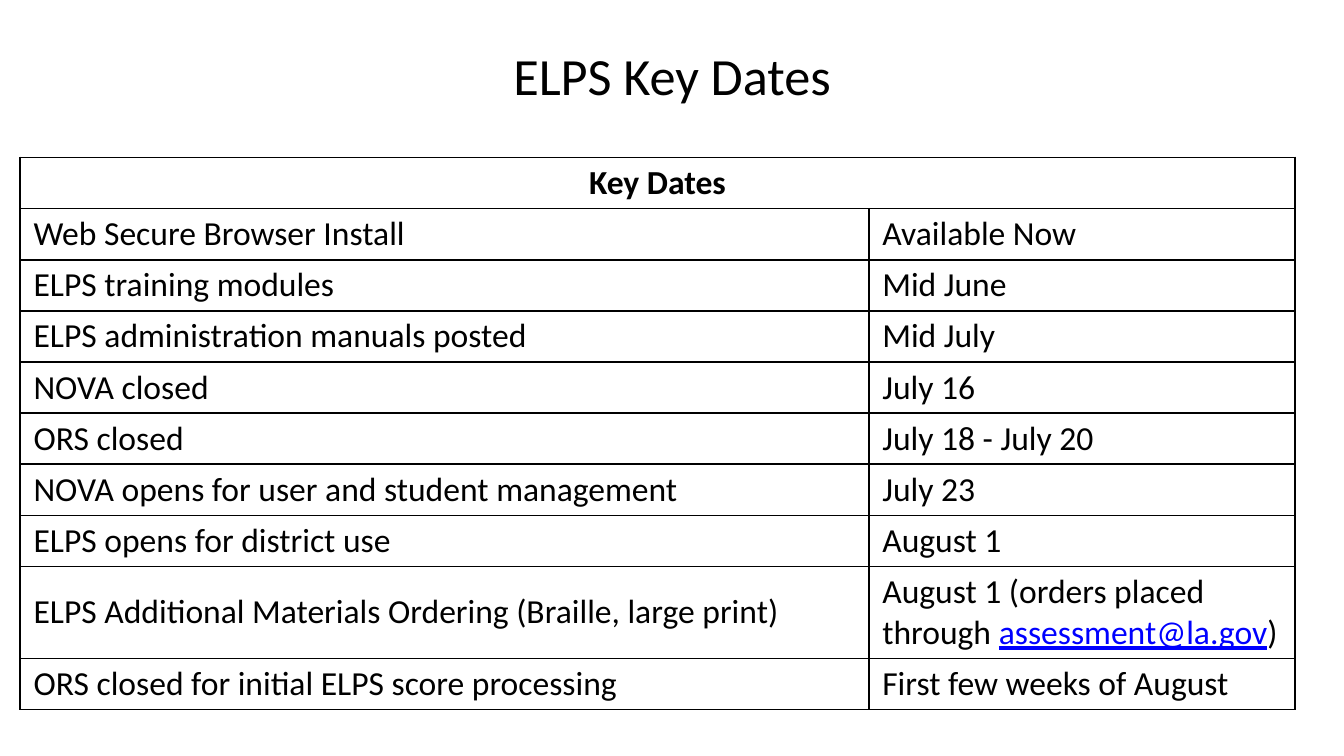
from dataclasses import dataclass

from lxml import etree
from pptx import Presentation
from pptx.dml.color import RGBColor
from pptx.enum import text
from pptx.oxml import ns
from pptx.util import Pt


@dataclass(frozen=True)
class Theme:
    font: str = "Calibri"
    ink: str = "000000"
    paper: str = "FFFFFF"
    link: str = "0000FF"
    title_size: int = 28
    body_size: int = 18
    border: float = 1


THEME = Theme()
EMAIL = "assessment@la.gov"
HEADING = "Key Dates"
KEY_DATES = [
    ("Web Secure Browser Install", "Available Now"),
    ("ELPS training modules", "Mid June"),
    ("ELPS administration manuals posted", "Mid July"),
    ("NOVA closed", "July 16"),
    ("ORS closed", "July 18 - July 20"),
    ("NOVA opens for user and student management", "July 23"),
    ("ELPS opens for district use", "August 1"),
    ("ELPS Additional Materials Ordering (Braille, large print)",
     f"August 1 (orders placed through {EMAIL})"),
    ("ORS closed for initial ELPS score processing", "First few weeks of August"),
]


def add_run(p, content, size, color=THEME.ink, **extra):
    r = p.add_run()
    r.text = content
    for name, value in dict(name=THEME.font, size=Pt(size), **extra).items():
        setattr(r.font, name, value)
    r.font.color.rgb = RGBColor.from_string(color)


def add_body(p, content, bold=False):
    before, email, after = content.partition(EMAIL)
    add_run(p, before, THEME.body_size, bold=bold)
    if email:
        add_run(p, email, THEME.body_size, THEME.link, underline=True)
        add_run(p, after, THEME.body_size)


def set_borders(cell):
    props = cell._tc.get_or_add_tcPr()
    for i, side in enumerate(("lnL", "lnR", "lnT", "lnB")):
        line = etree.Element(ns.qn(f"a:{side}"), w=str(Pt(THEME.border)))
        fill = etree.SubElement(line, ns.qn("a:solidFill"))
        etree.SubElement(fill, ns.qn("a:srgbClr"), val=THEME.ink)
        props.insert(i, line)


def format_cell(cell):
    margins = dict(margin_left=7.2, margin_right=7.2, margin_top=2.7, margin_bottom=2.7)
    for name, value in margins.items():
        setattr(cell, name, Pt(value))
    cell.vertical_anchor = text.MSO_ANCHOR.MIDDLE
    cell.fill.solid()
    cell.fill.fore_color.rgb = RGBColor.from_string(THEME.paper)
    set_borders(cell)


def place_title(s, content, left, top, width, height):
    sp = s.shapes.title
    for name, value in dict(left=left, top=top, width=width, height=height).items():
        setattr(sp, name, Pt(value))
    tf = sp.text_frame
    for side in ("left", "right", "top", "bottom"):
        setattr(tf, f"margin_{side}", Pt(7.2))
    tf.word_wrap = True
    tf.vertical_anchor = text.MSO_ANCHOR.MIDDLE
    p = tf.paragraphs[0]
    p.alignment = text.PP_ALIGN.CENTER
    add_run(p, content, THEME.title_size)


def place_dates(s, left, top, widths, row_height):
    count = len(KEY_DATES) + 1
    frame = s.shapes.add_table(
        count, len(widths), Pt(left), Pt(top), Pt(sum(widths)), Pt(row_height * count))
    table = frame.table
    table.first_row = table.horz_banding = False
    for column, width in zip(table.columns, widths):
        column.width = Pt(width)
    for row in table.rows:
        row.height = Pt(row_height)
        for cell in row.cells:
            format_cell(cell)
    header = table.cell(0, 0)
    header.merge(table.cell(0, 1))
    p = header.text_frame.paragraphs[0]
    p.alignment = text.PP_ALIGN.CENTER
    add_body(p, HEADING, bold=True)
    for i, entry in enumerate(KEY_DATES, start=1):
        for j, content in enumerate(entry):
            add_body(table.cell(i, j).text_frame.paragraphs[0], content)


def main():
    prs = Presentation()
    prs.slide_width, prs.slide_height = Pt(720), Pt(405)
    s = prs.slides.add_slide(prs.slide_layouts[5])
    place_title(s, "ELPS Key Dates", 36, 6.1, 648, 68)
    place_dates(s, 10.8, 84.4, (454.7, 228.3), 27.4)
    prs.save("out.pptx")


if __name__ == "__main__":
    main()
